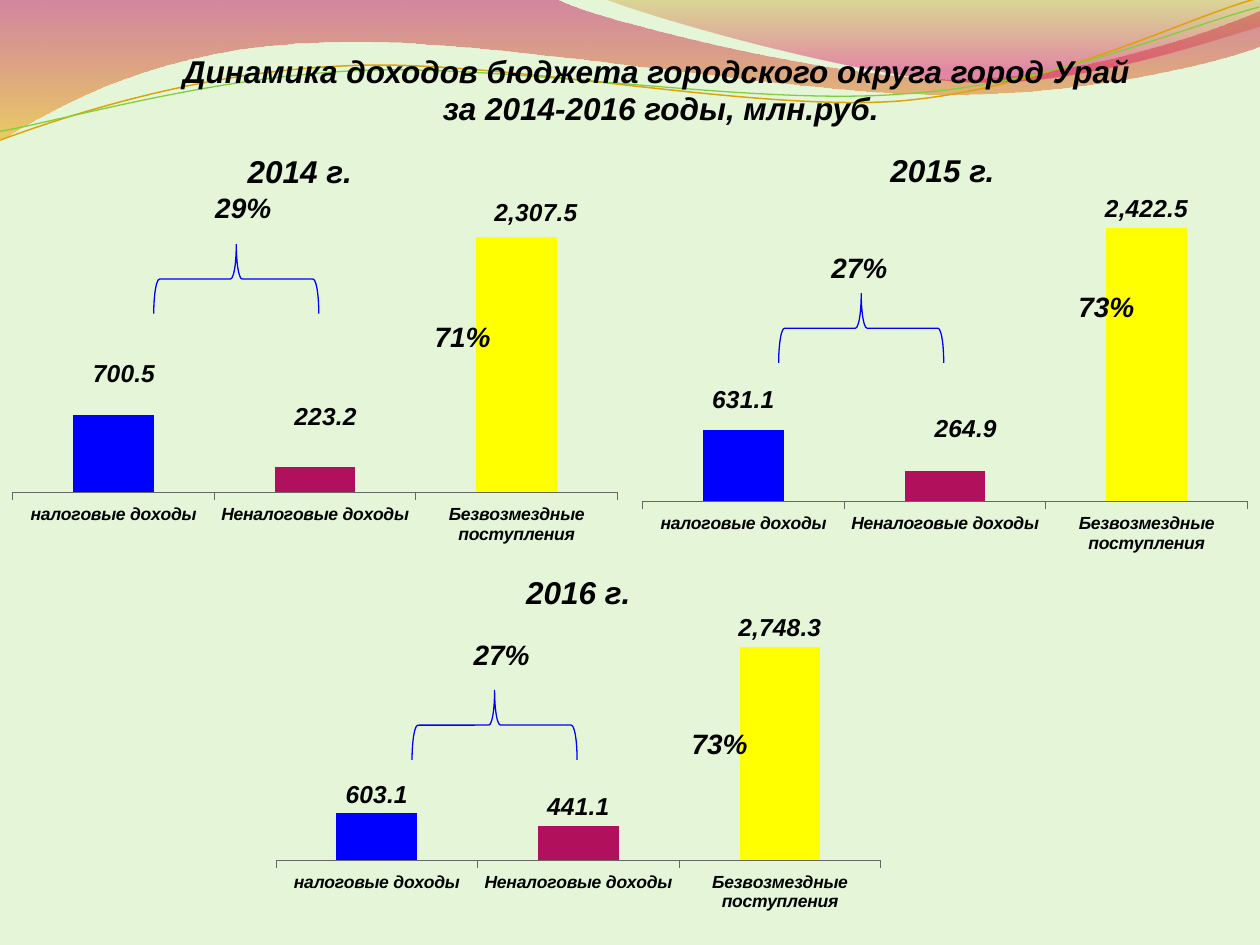
from math import cos, radians, sin

from lxml.etree import SubElement
from pptx import Presentation
from pptx.chart.data import CategoryChartData
from pptx.dml.color import RGBColor
from pptx.enum.chart import XL_CHART_TYPE, XL_LABEL_POSITION, XL_TICK_MARK
from pptx.enum.shapes import MSO_SHAPE
from pptx.enum.text import MSO_ANCHOR, MSO_AUTO_SIZE, PP_ALIGN
from pptx.oxml import parse_xml
from pptx.oxml.ns import nsdecls, qn
from pptx.util import Pt

COLORS = {
    "background": "E5F6D8", "text": "000000", "axis": "666666", "brace": "0000FF",
    "tax": "0000FF", "non_tax": "B0105C", "transfers": "FFFF00",
    "magenta": "BD0059", "amber": "F0AB00", "ochre": "C38B00", "pink": "E1006B",
    "gold": "E0A209", "green": "7FD13B",
}
TITLE = ["Динамика доходов бюджета городского округа город Урай ",
         "за 2014-2016 годы, млн.руб."]
CATEGORIES = [("налоговые доходы", "tax"), ("Неналоговые доходы", "non_tax"),
              ("Безвозмездные поступления", "transfers")]
CHARTS = [
    {"box": (0, 82.8, 360, 233.3), "values": (700.5, 223.2, 2307.5), "maximum": 2500,
     "plot": (0.02, 0.174, 0.96, 0.677), "title": ("2014 г.", 0.384, -0.007),
     "shifts": {0: (6, -12.5), 1: (6, -18), 2: (11, -3)}, "brace": (115.2, 112.3),
     "notes": [("29%", 115.9, 105.5, 46.8, 26.6, 16), ("71%", 241.2, 179.3, 46.8, 26.6, 16)]},
    {"box": (150.5, 315.4, 360, 210.2), "values": (603.1, 441.1, 2748.3), "maximum": 3000,
     "plot": (0.02, 0.205, 0.96, 0.633), "title": ("2016 г.", 0.408, 0.038),
     "shifts": {}, "brace": (262.8, 367.2),
     "notes": [("27%", 263.5, 360.7, 46.8, 26.6, 16), ("73%", 388.1, 411.8, 46.8, 26.6, 16)]},
    {"box": (360, 88.6, 360, 232.6), "values": (631.1, 264.9, 2422.5), "maximum": 2500,
     "plot": (0.02, 0.158, 0.96, 0.693), "title": None,
     "shifts": {0: (0, -6.5), 1: (12, -13.5)}, "brace": (472.3, 140.4),
     "notes": [("2015 г.", 501.8, 82.8, 74.2, 28.8, 18),
               ("27%", 468, 139.7, 46.8, 26.6, 16), ("73%", 609.1, 162, 46.8, 26.6, 16)]},
]
BANDS = [
    ([(0, 0), (316.8, -0.7), (342.7, 12.2, 478.1, 45.4, 545.8, 45.4),
      (614.2, 45.4, 689.8, 18.7, 720, 6.5), (720.7, 25.9),
      (707.8, 31.7, 626.4, 54.7, 537.1, 54), (447.8, 54, 275, 20.2, 185, 24.5),
      (92.9, 25.9, 33.1, 59.8, -0.7, 81.4)],
     [("magenta", 0, 45), ("amber", 1, 55)]),
    ([(344.9, -0.7), (366.5, 7.9, 491, 44.6, 553.7, 46.8),
      (616.3, 49.7, 691.9, 23, 720, 15.1), (720, 0)],
     [("ochre", 0, 30), ("pink", 0.8, 45)]),
]
RIBBON_TILT = -2.7
RIBBONS = [
    ([(0, 79.9), (34.6, 67, 113.8, 41, 199.4, 37.4),
      (284.4, 33.8, 427, 64.1, 513.4, 57.6),
      (599.8, 51.1, 675.4, 10.8, 718.6, -1.4)], (359.3, 41), "gold", 0.85),
    ([(0, 74.9), (33.8, 69.1, 118.1, 43.9, 203.8, 40.3),
      (290.2, 36.7, 429.8, 60.5, 516.2, 54),
      (601.9, 48.2, 677.5, 15.1, 720, 4.3)], (360, 42), "green", 0.75),
]


def color(name):
    return RGBColor.from_string(COLORS[name])


def style_font(font, size):
    font.name, font.size, font.bold, font.italic = "Arial", Pt(size), True, True
    font.color.rgb = color("text")


def rotate(point, pivot, degrees):
    angle = radians(degrees)
    x, y = point[0] - pivot[0], point[1] - pivot[1]
    return (pivot[0] + x * cos(angle) - y * sin(angle),
            pivot[1] + x * sin(angle) + y * cos(angle))


def add_outline(slide, segments, close, pivot=(0, 0), tilt=0):
    points = [rotate(segment[i:i + 2], pivot, -tilt)
              for segment in segments for i in range(0, len(segment), 2)]
    builder = slide.shapes.build_freeform(*points[0], scale=float(Pt(1)))
    builder.add_line_segments(points[1:], close=close)
    shape = builder.convert_to_shape()
    shape.rotation = tilt
    shape.shadow.inherit = False
    lines = list(shape._element.iter(qn("a:lnTo")))
    for segment in segments[1:]:
        count = len(segment) // 2
        group, lines = lines[:count], lines[count:]
        if count == 3:
            group[0].tag = qn("a:cubicBezTo")
            for line in group[1:]:
                group[0].append(line[0])
                line.getparent().remove(line)
    return shape


def add_waves(slide):
    for segments, stops in BANDS:
        shape = add_outline(slide, segments, True)
        shape.line.fill.background()
        shape.fill.gradient()
        shape.fill.gradient_angle = 270
        for stop, (name, position, _) in zip(shape.fill.gradient_stops, stops):
            stop.color.rgb = color(name)
            stop.position = position
        for element, (_, _, opacity) in zip(shape._element.iter(qn("a:srgbClr")), stops):
            SubElement(element, qn("a:alpha")).set("val", str(opacity * 1000))
    for segments, pivot, name, width in RIBBONS:
        shape = add_outline(slide, segments, False, pivot, RIBBON_TILT)
        shape.fill.background()
        shape.line.color.rgb = color(name)
        shape.line.width = Pt(width)


def add_title(slide):
    title = slide.shapes.title
    title.left, title.top, title.width, title.height = Pt(0), Pt(25.9), Pt(720), Pt(51.1)
    frame = title.text_frame
    frame.text = "\n".join(TITLE)
    frame.auto_size = MSO_AUTO_SIZE.SHAPE_TO_FIT_TEXT
    frame.vertical_anchor = MSO_ANCHOR.TOP
    for paragraph in frame.paragraphs:
        paragraph.alignment = PP_ALIGN.CENTER
        style_font(paragraph.font, 18)
        properties = paragraph._p.get_or_add_pPr()
        properties.set("marL", "0")
        properties.set("indent", str(Pt(35.3)))
    slide.shapes._spTree.append(title._element)


def set_layout(parent, index, **settings):
    for old in parent.findall(qn("c:layout")):
        parent.remove(old)
    layout = parse_xml(f"<c:layout {nsdecls('c')}><c:manualLayout/></c:layout>")
    for tag, value in settings.items():
        SubElement(layout[0], qn(f"c:{tag}")).set("val", str(value))
    parent.insert(index, layout)


def hide_leader_lines(labels):
    for element in labels.findall(qn("c:showLeaderLines")):
        element.set("val", "0")
    labels.append(parse_xml(
        f'<c:extLst {nsdecls("c")}><c:ext uri="{{CE6537A1-D6FC-4f65-9D91-7224C49458BB}}" '
        'xmlns:c15="http://schemas.microsoft.com/office/drawing/2012/chart">'
        '<c15:showLeaderLines val="0"/></c:ext></c:extLst>'))


def add_income_chart(slide, entry):
    data = CategoryChartData(number_format="#,##0.0")
    data.categories = [label for label, _ in CATEGORIES]
    data.add_series("Series 1", entry["values"])
    box = [Pt(length) for length in entry["box"]]
    chart = slide.shapes.add_chart(XL_CHART_TYPE.COLUMN_CLUSTERED, *box, data).chart
    chart.has_legend = False
    style_font(chart.font, 10)
    chart.has_title = entry["title"] is not None
    if entry["title"]:
        text, x, y = entry["title"]
        frame = chart.chart_title.text_frame
        frame.text = text
        style_font(frame.paragraphs[0].runs[0].font, 18)
        set_layout(chart.chart_title._element, 1, xMode="edge", yMode="edge", x=x, y=y)
    x, y, width, height = entry["plot"]
    set_layout(chart._chartSpace.chart.plotArea, 0, layoutTarget="inner",
               xMode="edge", yMode="edge", x=x, y=y, w=width, h=height)

    value_axis, category_axis = chart.value_axis, chart.category_axis
    value_axis.minimum_scale, value_axis.maximum_scale = 0, entry["maximum"]
    value_axis.has_major_gridlines = value_axis.visible = False
    category_axis.major_tick_mark = XL_TICK_MARK.OUTSIDE
    category_axis.format.line.color.rgb = color("axis")
    category_axis.format.line.width = Pt(0.25)
    style_font(category_axis.tick_labels.font, 10)

    plot = chart.plots[0]
    plot.gap_width = 150
    plot.vary_by_categories = False
    series = plot.series[0]
    for index, (_, name) in enumerate(CATEGORIES):
        fill = series.points[index].format.fill
        fill.solid()
        fill.fore_color.rgb = color(name)
    labels = series.data_labels
    labels.show_value = True
    labels.number_format, labels.number_format_is_linked = "#,##0.0", False
    labels.position = XL_LABEL_POSITION.OUTSIDE_END
    style_font(labels.font, 14)
    for index in entry["shifts"]:
        label = series.points[index].data_label
        style_font(label.font, 14)
        label.position = XL_LABEL_POSITION.OUTSIDE_END
    for element, (x, y) in zip(series._element.iter(qn("c:dLbl")), entry["shifts"].values()):
        set_layout(element, 1, x=round(x / entry["box"][2], 3), y=round(y / entry["box"][3], 3))
    hide_leader_lines(labels._element)


def add_brace(slide, left, top):
    brace = slide.shapes.add_shape(MSO_SHAPE.LEFT_BRACE, Pt(left), Pt(top), Pt(39.6), Pt(94.3))
    brace.rotation = 90
    brace.shadow.inherit = False
    brace.fill.background()
    brace.line.color.rgb = color("brace")
    brace.line.width = Pt(0.75)


def add_note(slide, text, left, top, width, height, size):
    frame = slide.shapes.add_textbox(Pt(left), Pt(top), Pt(width), Pt(height)).text_frame
    frame.word_wrap = False
    frame.auto_size = MSO_AUTO_SIZE.SHAPE_TO_FIT_TEXT
    frame.text = text
    style_font(frame.paragraphs[0].font, size)


def main():
    presentation = Presentation()
    presentation.slide_width, presentation.slide_height = Pt(720), Pt(540)
    slide = presentation.slides.add_slide(presentation.slide_layouts[5])
    slide.background.fill.solid()
    slide.background.fill.fore_color.rgb = color("background")
    add_waves(slide)
    add_title(slide)
    for entry in CHARTS:
        add_income_chart(slide, entry)
        add_brace(slide, *entry["brace"])
        for note in entry["notes"]:
            add_note(slide, *note)
    presentation.save("out.pptx")


if __name__ == "__main__":
    main()
